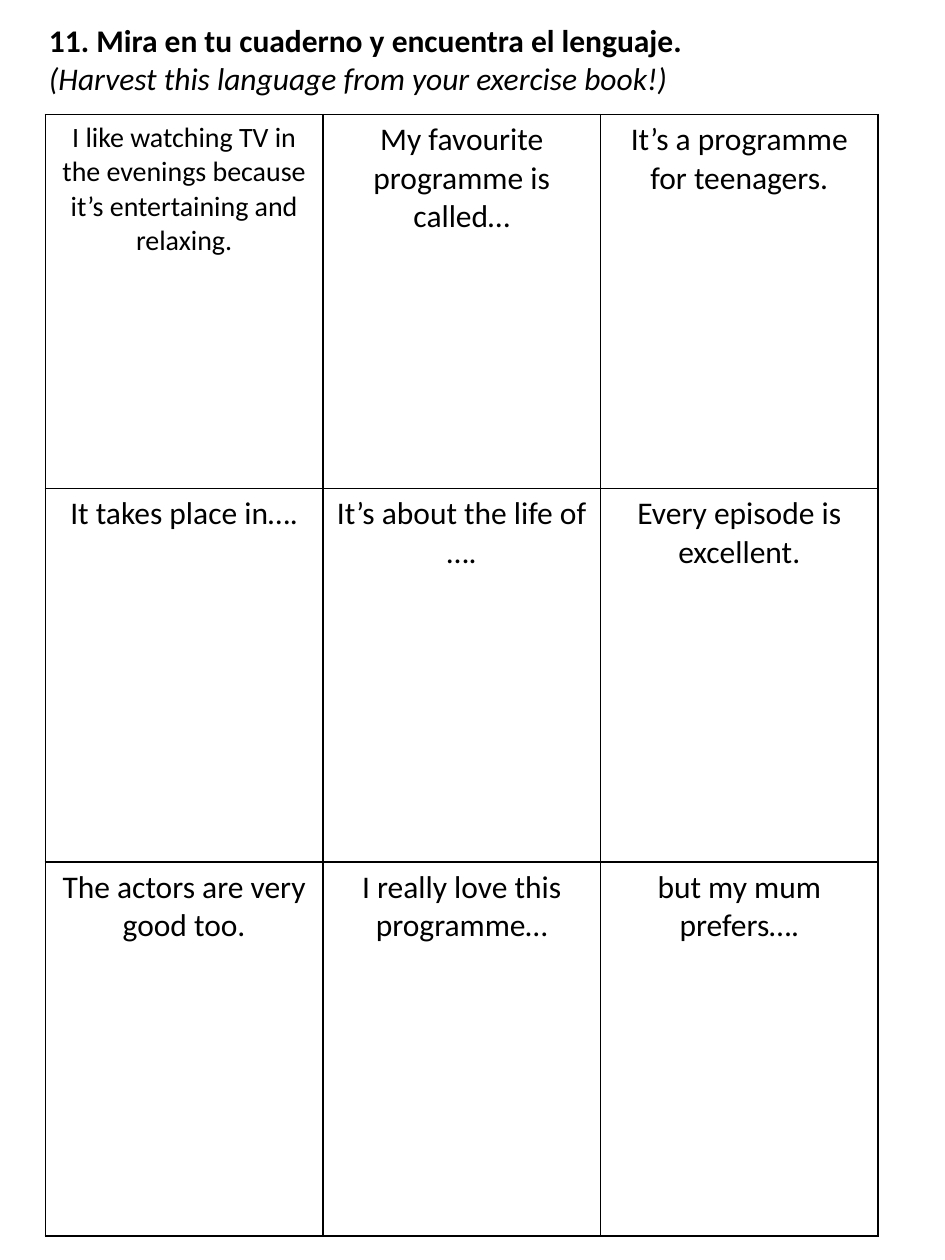
from lxml.etree import SubElement
from pptx import Presentation
from pptx.dml.color import RGBColor
from pptx.enum.text import MSO_AUTO_SIZE, PP_ALIGN
from pptx.oxml.ns import qn
from pptx.util import Inches, Pt

PHRASES = [
    ["I like watching TV in the evenings because it’s entertaining and relaxing.",
     "My favourite programme is called…",
     "It’s a programme for teenagers."],
    ["It takes place in….",
     "It’s about the life of ….",
     "Every episode is excellent."],
    ["The actors are very good too.",
     "I really love this programme…",
     "but my mum prefers…."],
]
LONG = 60  # phrases above this length take the smaller size


def color(code):
    return RGBColor.from_string(code)


class Sheet:
    font = "Calibri"
    ink = "000000"

    def __init__(self, slide):
        self.slide = slide

    def label(self, para, text, size=18, **extra):
        """Add a styled run to the paragraph."""
        run = para.add_run()
        run.text = text
        style = {"name": self.font, "size": Pt(size), **extra}
        for key, value in style.items():
            setattr(run.font, key, value)
        run.font.color.rgb = color(self.ink)

    def title(self, head, note, box):
        frame = self.slide.shapes.add_textbox(*map(Inches, box)).text_frame
        frame.word_wrap = True
        frame.auto_size = MSO_AUTO_SIZE.SHAPE_TO_FIT_TEXT
        para = frame.paragraphs[0]
        self.label(para, head, bold=True)
        para.add_line_break()
        self.label(para, note, italic=True)

    def border(self, cell):
        """Draw a 1 pt line on all four sides of the cell."""
        props = cell._tc.get_or_add_tcPr()
        for side in ("a:lnL", "a:lnR", "a:lnT", "a:lnB"):
            line = SubElement(props, qn(side), w=str(Pt(1)))
            fill = SubElement(line, qn("a:solidFill"))
            SubElement(fill, qn("a:srgbClr"), val=self.ink)

    def grid(self, rows, box):
        count = len(rows), len(rows[0])
        table = self.slide.shapes.add_table(*count, *map(Inches, box)).table
        table.first_row = table.horz_banding = False
        for r, row in enumerate(rows):
            for c, text in enumerate(row):
                cell = table.cell(r, c)
                self.border(cell)
                cell.fill.background()
                para = cell.text_frame.paragraphs[0]
                para.alignment = PP_ALIGN.CENTER
                self.label(para, text, 16 if len(text) > LONG else 18)


def main():
    deck = Presentation()
    deck.slide_width, deck.slide_height = Inches(7.5), Inches(10)
    sheet = Sheet(deck.slides.add_slide(deck.slide_layouts[6]))
    sheet.grid(PHRASES, (0.36, 0.91, 6.61, 8.9))
    sheet.title("11. Mira en tu cuaderno y encuentra el lenguaje.",
                "(Harvest this language from your exercise book!)",
                (0.29, 0.12, 7, 0.71))
    deck.save("out.pptx")


if __name__ == "__main__":
    main()
